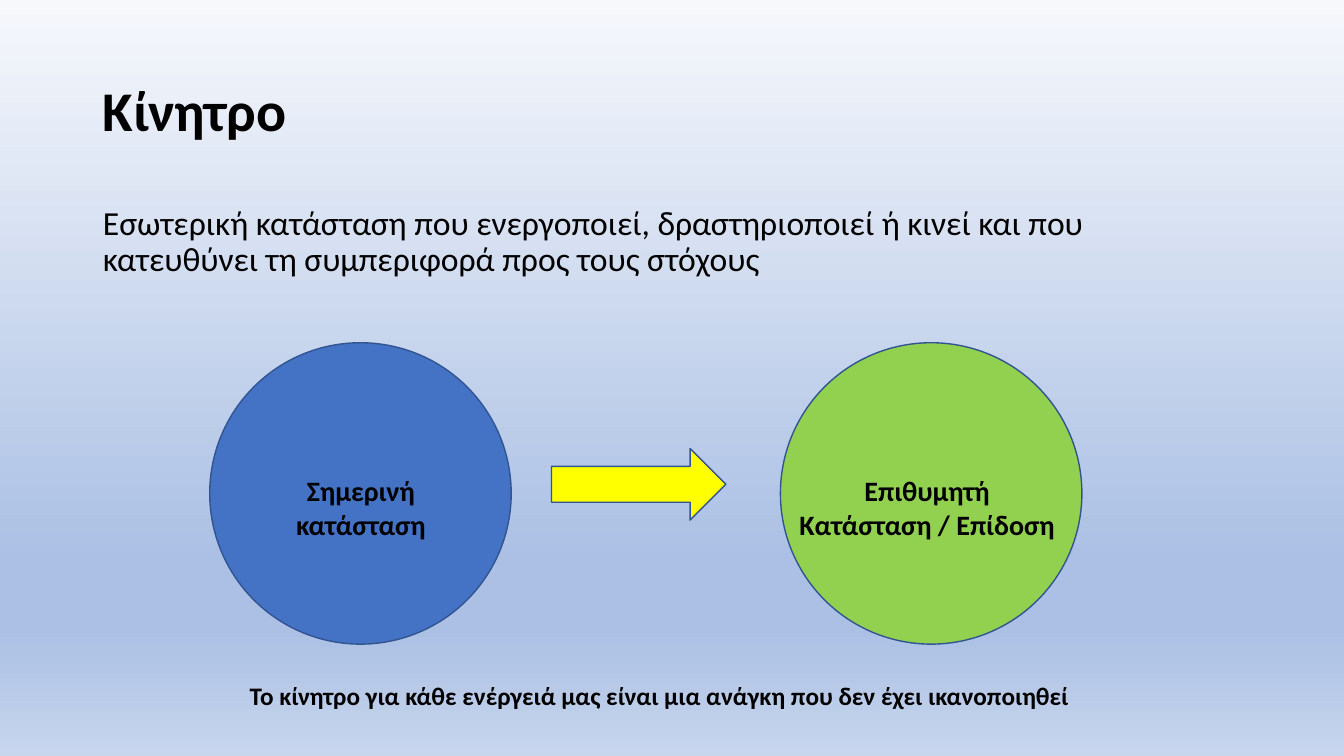
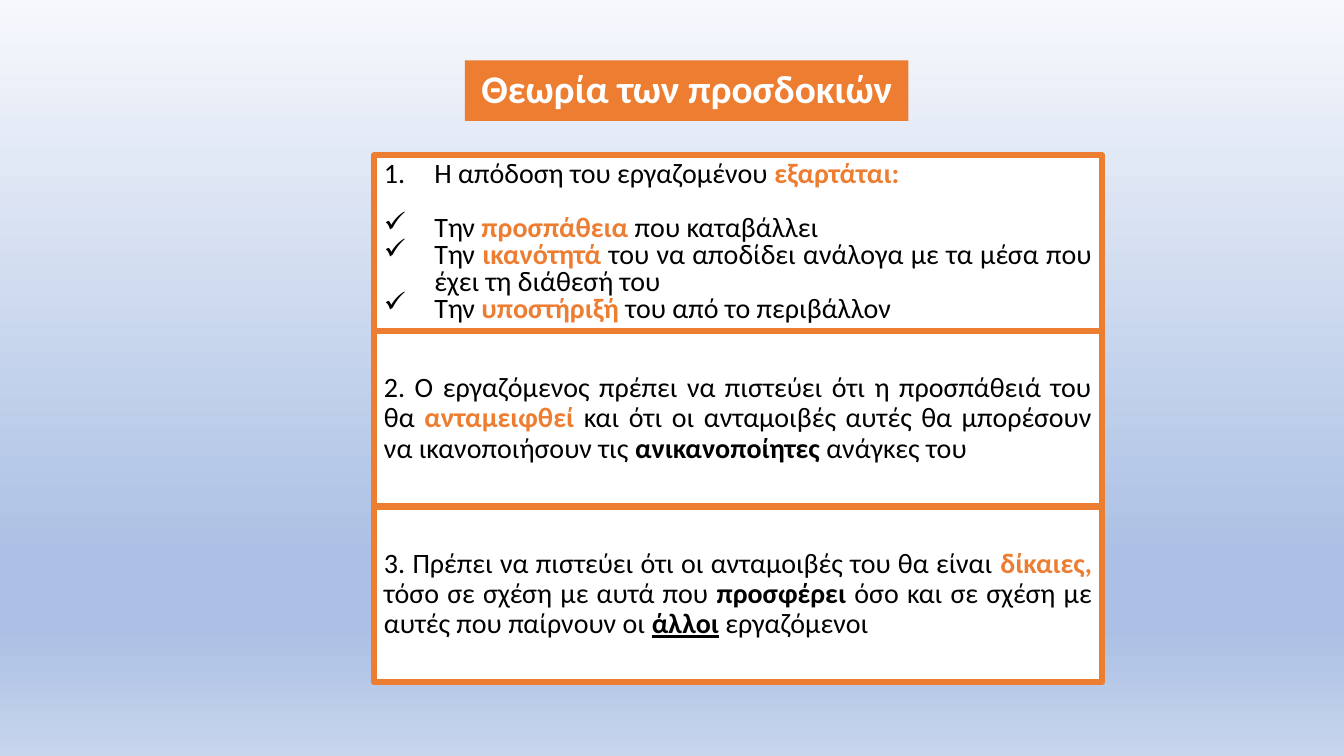
from dataclasses import dataclass

from lxml.etree import SubElement
from pptx import Presentation
from pptx.dml.color import RGBColor
from pptx.enum.shapes import MSO_SHAPE
from pptx.enum.text import MSO_ANCHOR, MSO_AUTO_SIZE, PP_ALIGN
from pptx.oxml.ns import qn
from pptx.presentation import Presentation as Deck
from pptx.shapes.autoshape import Shape
from pptx.slide import Slide
from pptx.text.text import TextFrame, _Paragraph as Paragraph
from pptx.util import Inches, Pt


@dataclass(frozen=True)
class Theme:
    font: str = "Calibri"
    black: str = "000000"
    white: str = "FFFFFF"
    orange: str = "ED7D31"
    blue: str = "4472C4"
    green: str = "92D050"
    yellow: str = "FFFF00"
    outline: str = "325491"
    backdrop: tuple[tuple[int, str], ...] = (
        (0, "F6F8FC"), (74, "ABC0E4"), (83, "ABC0E4"), (100, "C7D5ED"))
    title_size: int = 40
    banner_size: int = 28
    lead_size: int = 24
    text_size: int = 20
    note_size: int = 18


THEME = Theme()


@dataclass(frozen=True)
class Box:
    left: float
    top: float
    width: float
    height: float

    def lengths(self) -> tuple[int, int, int, int]:
        return (Inches(self.left), Inches(self.top),
                Inches(self.width), Inches(self.height))


@dataclass(frozen=True)
class Span:
    text: str
    bold: bool = False
    color: str = THEME.black
    underline: bool = False


@dataclass(frozen=True)
class Para:
    spans: tuple[Span, ...]
    bullet: str = ""
    space_after: float = 0


@dataclass(frozen=True)
class State:
    circle: Box
    color: str
    label: Box
    lines: tuple[str, ...]


def key(text: str) -> Span:
    """Return a span in the accent colour."""
    return Span(text, bold=True, color=THEME.orange)


def strong(text: str, underline: bool = False) -> Span:
    return Span(text, bold=True, underline=underline)


def check(*spans: Span) -> Para:
    return Para(spans, bullet="✓")


DIAMETER = 2.99
CIRCLE_TOP = 3.4
LABEL_TOP = 4.65
LABEL_HEIGHT = 0.79
STATES = (
    State(Box(2.08, CIRCLE_TOP, DIAMETER, DIAMETER), THEME.blue,
          Box(2.18, LABEL_TOP, 2.8, LABEL_HEIGHT), ("Σημερινή", "κατάσταση")),
    State(Box(7.74, CIRCLE_TOP, DIAMETER, DIAMETER), THEME.green,
          Box(7.74, LABEL_TOP, 2.91, LABEL_HEIGHT),
          ("Επιθυμητή", "Κατάσταση / Επίδοση")),
)

PANEL_LEFT, PANEL_TOP, PANEL_WIDTH = 3.71, 1.54, 7.22
STACK_HEIGHT = 5.23
PANELS = (
    (
        Para((Span("Η απόδοση του εργαζομένου "), key("εξαρτάται:")),
             bullet="1.", space_after=19.5),
        check(Span("Την "), key("προσπάθεια"), Span(" που καταβάλλει")),
        check(Span("Την "), key("ικανότητά "),
              Span("του να αποδίδει ανάλογα με τα μέσα που έχει τη διάθεσή του")),
        check(Span("Την "), key("υποστήριξή "), Span("του από το περιβάλλον")),
    ),
    (
        Para((Span("2. Ο εργαζόμενος πρέπει να πιστεύει ότι η προσπάθειά του θα "),
              key("ανταμειφθεί"),
              Span(" και ότι οι ανταμοιβές αυτές θα μπορέσουν να ικανοποιήσουν τις "),
              strong("ανικανοποίητες"), Span(" ανάγκες του"))),
    ),
    (
        Para((Span("3. Πρέπει να πιστεύει ότι οι ανταμοιβές του θα είναι "),
              key("δίκαιες,"), Span(" τόσο σε σχέση με αυτά που "),
              strong("προσφέρει"),
              Span(" όσο και σε σχέση με αυτές που παίρνουν οι "),
              strong("άλλοι", underline=True), Span(" εργαζόμενοι"))),
    ),
)


def rgb(color: str) -> RGBColor:
    return RGBColor.from_string(color)


def place(shape: Shape, box: Box) -> None:
    shape.left, shape.top, shape.width, shape.height = box.lengths()


def set_backdrop(deck: Deck) -> None:
    """Give the slide master the gradient that every slide inherits."""
    master = deck.slide_master
    fill = master.background.fill
    fill.gradient()
    fill.gradient_angle = 270
    stops = master.element.find(".//" + qn("a:gsLst"))
    for stop in list(stops):
        stops.remove(stop)
    for percent, color in THEME.backdrop:
        stop = SubElement(stops, qn("a:gs"), pos=str(percent * 1000))
        SubElement(stop, qn("a:srgbClr"), val=color)


def set_bullet(para: Paragraph, bullet: str) -> None:
    """Number or tick a paragraph with a hanging indent, or clear its bullet."""
    properties = para._p.get_or_add_pPr()
    indent = Inches(0.5) if bullet else 0
    properties.set("marL", str(indent))
    properties.set("indent", str(-indent))
    if not bullet:
        SubElement(properties, qn("a:buNone"))
    elif bullet == "1.":
        SubElement(properties, qn("a:buAutoNum"), type="arabicPeriod")
    else:
        SubElement(properties, qn("a:buChar"), char=bullet)


def write(frame: TextFrame, paras: tuple[Para, ...], size: int,
          align: PP_ALIGN = PP_ALIGN.LEFT, spacing: float = 1.0,
          before: float = 0, anchor: MSO_ANCHOR = MSO_ANCHOR.TOP) -> None:
    frame.word_wrap = True
    frame.auto_size = MSO_AUTO_SIZE.NONE
    frame.vertical_anchor = anchor
    for index, content in enumerate(paras):
        para = frame.add_paragraph() if index else frame.paragraphs[0]
        para.alignment = align
        para.line_spacing = spacing
        para.space_before = Pt(before)
        para.space_after = Pt(content.space_after)
        set_bullet(para, content.bullet)
        for span in content.spans:
            run = para.add_run()
            run.text = span.text
            run.font.name = THEME.font
            run.font.size = Pt(size)
            run.font.bold = span.bold
            run.font.underline = span.underline
            run.font.color.rgb = rgb(span.color)


def set_title(slide: Slide, box: Box, span: Span, size: int,
              align: PP_ALIGN = PP_ALIGN.LEFT) -> Shape:
    title = slide.shapes.title
    place(title, box)
    write(title.text_frame, (Para((span,)),), size, align, spacing=0.9,
          anchor=MSO_ANCHOR.MIDDLE)
    return title


def add_figure(slide: Slide, kind: MSO_SHAPE, box: Box, fill: str,
               line: str = THEME.outline, line_width: float = 1) -> Shape:
    shape = slide.shapes.add_shape(kind, *box.lengths())
    shape.shadow.inherit = False
    shape.fill.solid()
    shape.fill.fore_color.rgb = rgb(fill)
    shape.line.color.rgb = rgb(line)
    shape.line.width = Pt(line_width)
    return shape


def add_label(slide: Slide, box: Box, lines: tuple[str, ...], size: int) -> None:
    label = slide.shapes.add_textbox(*box.lengths())
    paras = tuple(Para((strong(line),)) for line in lines)
    write(label.text_frame, paras, size, PP_ALIGN.CENTER)


def build_motive(deck: Deck) -> None:
    slide = deck.slides.add_slide(deck.slide_layouts.get_by_name("Title and Content"))
    set_title(slide, Box(0.92, 0.4, 11.5, 1.45), strong("Κίνητρο"), THEME.title_size)
    body = slide.placeholders[1]
    place(body, Box(0.92, 2, 11.5, 4.76))
    definition = Span("Εσωτερική κατάσταση που ενεργοποιεί, δραστηριοποιεί ή κινεί "
                      "και που κατευθύνει τη συμπεριφορά προς τους στόχους")
    write(body.text_frame, (Para((definition,)),), THEME.lead_size,
          spacing=0.9, before=10)
    for state in STATES:
        add_figure(slide, MSO_SHAPE.OVAL, state.circle, state.color)
        add_label(slide, state.label, state.lines, THEME.text_size)
    add_figure(slide, MSO_SHAPE.RIGHT_ARROW, Box(5.47, 4.45, 1.73, 0.71), THEME.yellow)
    add_label(slide, Box(2.08, 6.7, 8.92, 0.4),
              ("Το κίνητρο για κάθε ενέργειά μας είναι μια ανάγκη "
               "που δεν έχει ικανοποιηθεί",), THEME.note_size)


def build_expectancy(deck: Deck) -> None:
    slide = deck.slides.add_slide(deck.slide_layouts.get_by_name("Title Only"))
    banner = set_title(slide, Box(4.61, 0.6, 4.4, 0.6),
                       Span("Θεωρία των προσδοκιών", bold=True, color=THEME.white),
                       THEME.banner_size, PP_ALIGN.CENTER)
    banner.fill.solid()
    banner.fill.fore_color.rgb = rgb(THEME.orange)
    height = STACK_HEIGHT / len(PANELS)
    for index, paras in enumerate(PANELS):
        box = Box(PANEL_LEFT, PANEL_TOP + index * height, PANEL_WIDTH, height)
        panel = add_figure(slide, MSO_SHAPE.RECTANGLE, box, THEME.white,
                           THEME.orange, line_width=4.5)
        write(panel.text_frame, paras, THEME.text_size, PP_ALIGN.JUSTIFY,
              spacing=0.8 if paras[0].bullet else 0.9, anchor=MSO_ANCHOR.MIDDLE)


def main() -> None:
    deck = Presentation()
    deck.slide_width, deck.slide_height = Inches(13.33), Inches(7.5)
    set_backdrop(deck)
    build_motive(deck)
    build_expectancy(deck)
    deck.save("out.pptx")


if __name__ == "__main__":
    main()
